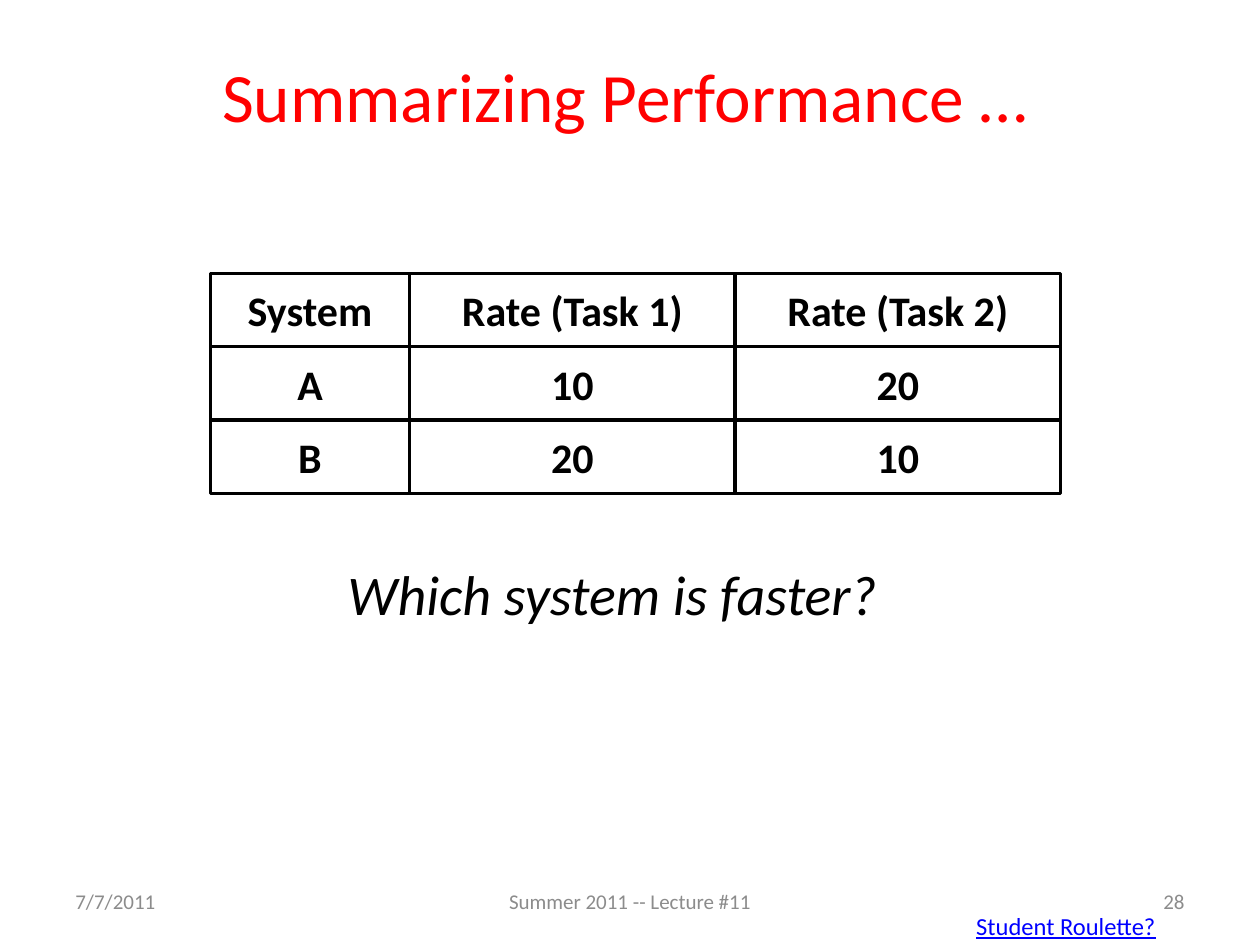
from dataclasses import dataclass, field
from itertools import accumulate

from pptx import Presentation
from pptx import util as u
from pptx.dml.color import RGBColor
from pptx.enum import shapes as s
from pptx.enum import text as t

COLORS = {"title": "FF0000", "body": "000000", "footer": "8C8C8C", "link": "0000FF"}
FONT = "Calibri"
LEFT, CENTER, RIGHT = t.PP_ALIGN.LEFT, t.PP_ALIGN.CENTER, t.PP_ALIGN.RIGHT

RATES = [
    ("System", "Rate (Task 1)", "Rate (Task 2)"),
    ("A", "10", "20"),
    ("B", "20", "10"),
]
COLUMN_WIDTHS = (4.02, 6.56, 6.56)
ROW_HEIGHT = 1.48


@dataclass
class Label:
    """A text box; lengths are in centimetres."""
    text: str
    left: float
    top: float
    width: float
    height: float
    style: dict = field(default_factory=dict)
    anchor: t.MSO_ANCHOR = t.MSO_ANCHOR.MIDDLE
    wrap: bool = True


FOOTER = {"size": 12, "color": "footer"}
LABELS = [
    Label("7/7/2011", 1.27, 17.65, 5.93, 1.02, FOOTER),
    Label("Summer 2011 -- Lecture #11", 8.68, 17.65, 8.04, 1.02, {**FOOTER, "align": CENTER}),
    Label("28", 18.2, 17.65, 5.93, 1.02, {**FOOTER, "align": RIGHT}),
    Label("Summarizing Performance …", 2.97, 1.06, 19.26, 1.69,
          {"size": 39.6, "color": "title", "align": CENTER}),
    Label("Which system is faster?", 6.76, 11.09, 13.26, 1.75,
          {"size": 32, "italic": True, "space_before": 6.4}),
    Label("Student Roulette?", 19.43, 18.24, 4.17, 0.86,
          {"size": 14, "color": "link", "underline": True}, t.MSO_ANCHOR.TOP, False),
]


def write_text(frame, text: str, *, size: float, color: str = "body", align=LEFT,
               bold: bool = False, italic: bool = False, underline: bool = False,
               space_before: float = 0) -> None:
    paragraph = frame.paragraphs[0]
    paragraph.alignment = align
    paragraph.space_before = u.Pt(space_before)
    run = paragraph.add_run()
    run.text = text
    font = run.font
    font.name, font.size = FONT, u.Pt(size)
    font.bold, font.italic, font.underline = bold, italic, underline
    font.color.rgb = RGBColor.from_string(COLORS[color])


def add_label(slide, label: Label) -> None:
    box = slide.shapes.add_textbox(
        u.Cm(label.left), u.Cm(label.top), u.Cm(label.width), u.Cm(label.height))
    frame = box.text_frame
    frame.word_wrap = label.wrap
    frame.vertical_anchor = label.anchor
    write_text(frame, label.text, **label.style)


def add_rate_cell(group, text: str, left: float, top: float, width: float) -> None:
    cell = group.shapes.add_shape(
        s.MSO_SHAPE.RECTANGLE, u.Cm(left), u.Cm(top), u.Cm(width), u.Cm(ROW_HEIGHT))
    cell.shadow.inherit = False
    cell.fill.background()
    cell.line.color.rgb = RGBColor.from_string(COLORS["body"])
    cell.line.width = u.Pt(2)
    frame = cell.text_frame
    frame.word_wrap = True
    frame.vertical_anchor = t.MSO_ANCHOR.MIDDLE
    frame.margin_left = frame.margin_right = u.Cm(0.1)
    frame.margin_top = frame.margin_bottom = u.Cm(0.05)
    write_text(frame, text, size=24, bold=True, align=CENTER, space_before=4.8)


def add_rate_grid(slide, left: float, top: float) -> None:
    group = slide.shapes.add_group_shape()
    for row, values in enumerate(RATES):
        lefts = accumulate(COLUMN_WIDTHS, initial=left)
        for value, cell_left, width in zip(values, lefts, COLUMN_WIDTHS):
            add_rate_cell(group, value, cell_left, top + row * ROW_HEIGHT, width)


def main() -> None:
    presentation = Presentation()
    presentation.slide_width, presentation.slide_height = u.Cm(25.4), u.Cm(19.05)
    slide = presentation.slides.add_slide(presentation.slide_layouts[6])
    for label in LABELS:
        add_label(slide, label)
    add_rate_grid(slide, 4.24, 5.51)
    presentation.save("out.pptx")


if __name__ == "__main__":
    main()
